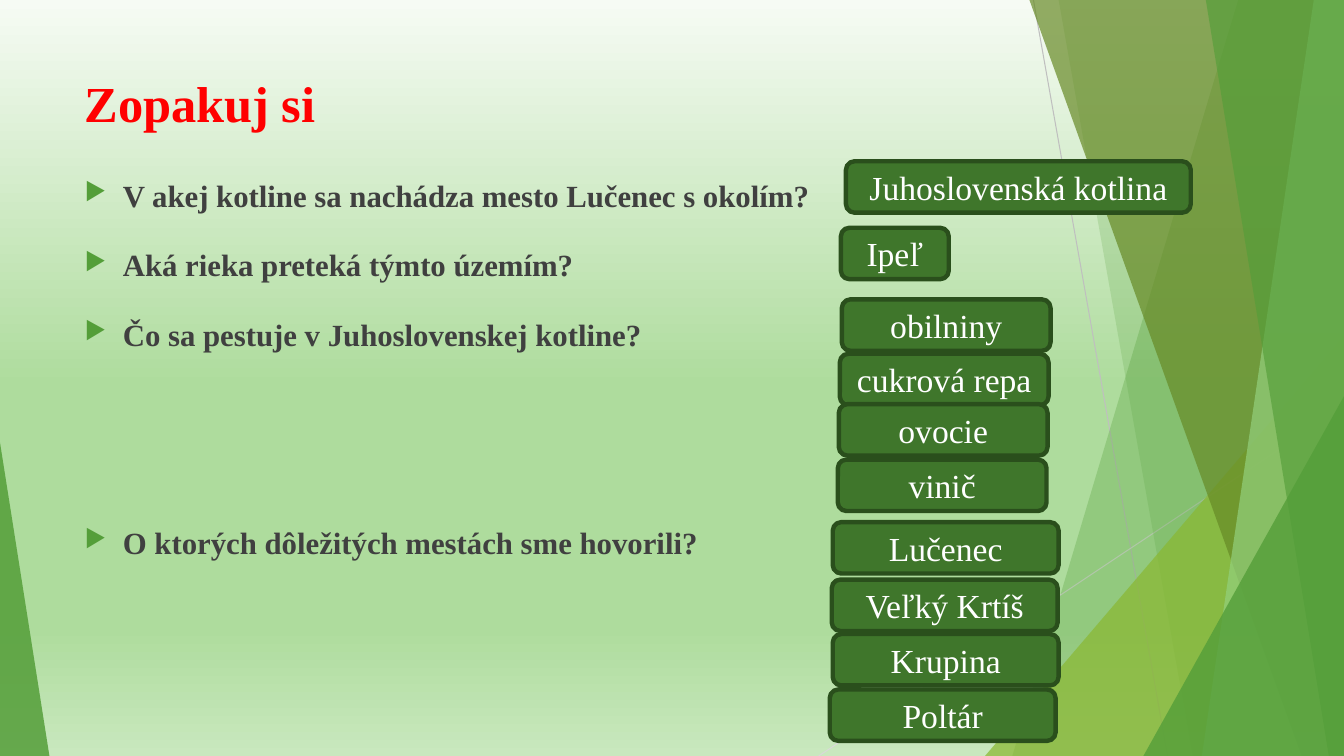
from lxml import etree
from pptx import Presentation
from pptx.dml.color import RGBColor
from pptx.enum.shapes import MSO_CONNECTOR, MSO_SHAPE
from pptx.enum.text import MSO_ANCHOR, PP_ALIGN
from pptx.oxml.ns import qn
from pptx.util import Inches, Pt

STRAIGHT = MSO_CONNECTOR.STRAIGHT
TRIANGLE, ROUNDED = MSO_SHAPE.ISOSCELES_TRIANGLE, MSO_SHAPE.ROUNDED_RECTANGLE
TOP, MIDDLE = MSO_ANCHOR.TOP, MSO_ANCHOR.MIDDLE
LEFT, CENTER = PP_ALIGN.LEFT, PP_ALIGN.CENTER

WIDTH, HEIGHT = 13.33, 7.5
FONT = "Times New Roman"
COLOURS = {
    "green": "549E39", "lime": "8AB833", "olive": "678A26", "mint": "93D07D",
    "grey": "BFBFBF", "pale_grey": "D9D9D9", "title": "FF0000", "text": "404040",
    "answer": "3F762B", "answer_edge": "2A4F1C", "white": "FFFFFF",
}
BACKGROUND_STOPS = [(0, "F6FBF4"), (51, "AEDC9D"), (83, "AEDC9D"), (100, "C9E8BE")]

# Question and the space before it in points
QUESTIONS = [
    ("V akej kotline sa nachádza mesto Lučenec s okolím?", 0),
    ("Aká rieka preteká týmto územím?", 10),
    ("Čo sa pestuje v Juhoslovenskej kotline?", 10),
    ("O ktorých dôležitých mestách sme hovorili?", 109),
]
# Width of the labels in a group, then text, left and top of each
ANSWERS = [
    (3.42, [("Juhoslovenská kotlina", 8.39, 1.6)]),
    (1.07, [("Ipeľ", 8.34, 2.26)]),
    (2.07, [("obilniny", 8.35, 2.97), ("cukrová repa", 8.33, 3.51),
            ("ovocie", 8.32, 4.01), ("vinič", 8.31, 4.56)]),
    (2.24, [("Veľký Krtíš", 8.25, 5.75), ("Lučenec", 8.26, 5.18),
            ("Poltár", 8.23, 6.84), ("Krupina", 8.26, 6.29)]),
]
ANSWER_HEIGHT = 0.51


def rgb(name):
    return RGBColor.from_string(COLOURS[name])


def add_element(parent, tag, **attributes):
    element = etree.SubElement(parent, qn(tag))
    for key, value in attributes.items():
        element.set(key, str(value))
    return element


def paint_background(page):
    fill = page.background.fill
    fill.gradient()
    properties = page.background._cSld.bg.bgPr
    stops = properties.find(".//" + qn("a:gsLst"))
    for stop in list(stops):
        stops.remove(stop)
    for position, colour in BACKGROUND_STOPS:
        stop = add_element(stops, "a:gs", pos=position * 1000)
        add_element(stop, "a:srgbClr", val=colour)
    properties.find(".//" + qn("a:lin")).set("ang", "5400000")


def paint_facet(shape, colour, opacity):
    shape.shadow.inherit = False
    shape.fill.solid()
    shape.fill.fore_color.rgb = rgb(colour)
    shape.line.fill.background()
    tint = shape.fill._xPr.find(".//" + qn("a:srgbClr"))
    add_element(tint, "a:alpha", val=opacity * 1000)


def add_band(page, top_x, bottom_x, colour, opacity):
    """Full-height facet between a slanted left edge and the right slide edge."""
    builder = page.shapes.build_freeform(Inches(top_x), 0)
    corners = [(WIDTH, 0), (WIDTH, HEIGHT), (bottom_x, HEIGHT)]
    builder.add_line_segments([(Inches(x), Inches(y)) for x, y in corners], close=True)
    paint_facet(builder.convert_to_shape(), colour, opacity)


def add_corner(page, left, width, height, apex, colour, opacity):
    """Right triangle standing on the bottom edge; apex is 0 (left) or 1 (right)."""
    box = [Inches(v) for v in (left, HEIGHT - height, width, height)]
    shape = page.shapes.add_shape(TRIANGLE, *box)
    shape.adjustments[0] = apex
    paint_facet(shape, colour, opacity)


def add_hairline(page, start, end, colour):
    line = page.shapes.add_connector(STRAIGHT, *[Inches(v) for v in start + end])
    line.line.color.rgb = rgb(colour)
    line.line.width = Pt(0.75)
    add_element(line._element.spPr, "a:effectLst")


def add_facets(page):
    add_hairline(page, (10.25, 0), (11.58, HEIGHT), "grey")
    add_hairline(page, (WIDTH, 4.03), (8.12, HEIGHT), "pale_grey")
    add_band(page, 12.28, 10.04, "green", 30)
    add_band(page, 10.5, 11.83, "green", 20)
    add_corner(page, 9.77, 3.56, 4.17, 1, "lime", 72)
    add_band(page, 10.21, 12.91, "olive", 70)
    add_band(page, 13.03, 11.92, "mint", 70)
    add_band(page, 11.96, 13.18, "green", 65)
    add_corner(page, 11.34, 1.99, 3.57, 1, "green", 80)
    add_corner(page, 0, 0.49, 3.11, 0, "green", 85)


def add_span(para, text, size, colour, bold=False):
    span = para.add_run()
    span.text = text
    span.font.name = FONT
    span.font.size = Pt(size)
    span.font.bold = bold
    span.font.color.rgb = rgb(colour)


def add_text_frame(page, left, top, width, height):
    box = page.shapes.add_textbox(*[Inches(v) for v in (left, top, width, height)])
    frame = box.text_frame
    frame.word_wrap = True
    frame.vertical_anchor = TOP
    return frame


def add_title(page, *box):
    para = add_text_frame(page, *box).paragraphs[0]
    add_span(para, "Zopakuj si", 36, "title", True)


def add_bullet(para):
    properties = para._p.get_or_add_pPr()
    properties.set("marL", str(Inches(0.38)))
    properties.set("indent", str(-Inches(0.38)))
    add_element(add_element(properties, "a:buClr"), "a:srgbClr", val=COLOURS["green"])
    add_element(properties, "a:buSzPct", val=80000)
    add_element(properties, "a:buChar", char="▶")


def add_questions(page, *box):
    frame = add_text_frame(page, *box)
    for index, (question, gap) in enumerate(QUESTIONS):
        para = frame.add_paragraph() if index else frame.paragraphs[0]
        add_bullet(para)
        para.alignment = LEFT
        para.line_spacing = 1.5
        para.space_before = Pt(gap)
        add_span(para, question, 22, "text", True)


def add_answer(page, text, left, top, width):
    box = [Inches(v) for v in (left, top, width, ANSWER_HEIGHT)]
    label = page.shapes.add_shape(ROUNDED, *box)
    label.shadow.inherit = False
    label.fill.solid()
    label.fill.fore_color.rgb = rgb("answer")
    label.line.color.rgb = rgb("answer_edge")
    label.line.width = Pt(3.15)
    frame = label.text_frame
    frame.word_wrap = True
    frame.vertical_anchor = MIDDLE
    para = frame.paragraphs[0]
    para.alignment = CENTER
    add_span(para, text, 24, "white")


def main():
    deck = Presentation()
    deck.slide_width, deck.slide_height = Inches(WIDTH), Inches(HEIGHT)
    page = deck.slides.add_slide(deck.slide_layouts[6])
    paint_background(page)
    add_facets(page)
    add_title(page, 0.74, 0.67, 9.4, 1.44)
    add_questions(page, 0.74, 1.52, 11.41, 5.9)
    for width, labels in ANSWERS:
        for text, left, top in labels:
            add_answer(page, text, left, top, width)
    deck.save("out.pptx")


if __name__ == "__main__":
    main()
